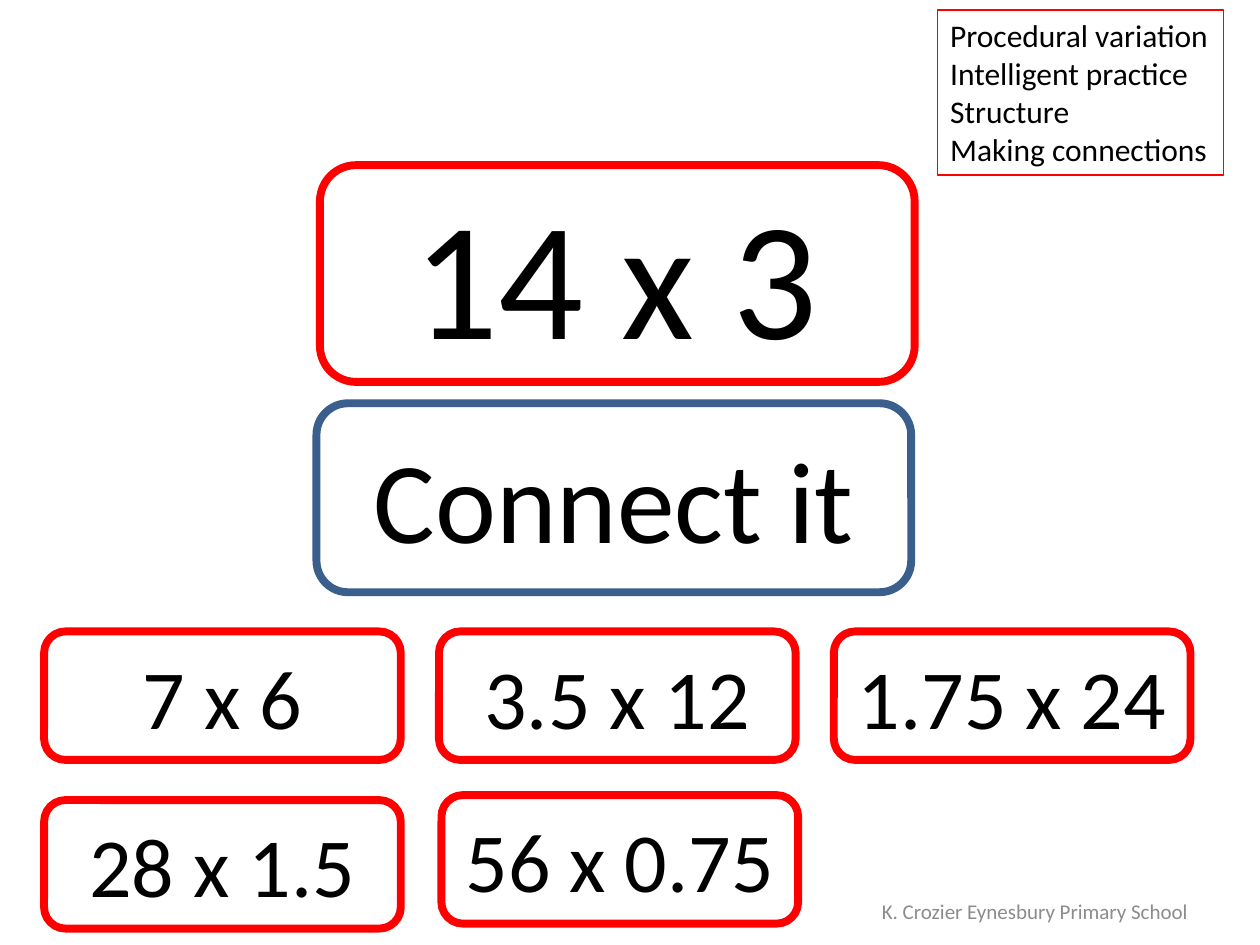
from lxml.etree import SubElement
from pptx import Presentation
from pptx.dml.color import RGBColor
from pptx.enum.shapes import MSO_SHAPE
from pptx.enum.text import MSO_ANCHOR, MSO_AUTO_SIZE, PP_ALIGN
from pptx.oxml.ns import qn
from pptx.util import Cm, Pt

question = "14 x 3"
prompt = "Connect it"
principles = [
    "Procedural variation",
    "Intelligent practice",
    "Structure",
    "Making connections",
]
connections = [
    ("7 x 6", (0, 0)),
    ("3.5 x 12", (0, 0)),
    ("1.75 x 24", (0, 0)),
    ("28 x 1.5", (0, 0)),
    ("56 x 0.75", (0.05, -0.1)),
]
credit = "K. Crozier Eynesbury Primary School"

THEME = {
    "font": "Calibri",
    "text": "000000",
    "muted": "8C8C8C",
    "red": "FF0000",
    "blue": "3A5F8C",
    "sizes": {"question": 96, "prompt": 66, "connection": 48, "principle": 18, "credit": 12},
    "thick": 4.5,
    "thin": 0.75,
}
GRID = {"left": 0.89, "top": 12.73, "across": 7.96, "down": 3.4, "columns": 3}
CARD = (7.19, 2.59)


def place(part, left, top, width, height):
    box = {"left": left, "top": top, "width": width, "height": height}
    for side, length in box.items():
        setattr(part, side, Cm(length))


def write(part, lines, role, color="text", align=PP_ALIGN.CENTER, wrap=True,
          anchor=MSO_ANCHOR.MIDDLE):
    frame = part.text_frame
    frame.text = "\n".join(lines)
    frame_format = {"auto_size": MSO_AUTO_SIZE.NONE, "word_wrap": wrap, "vertical_anchor": anchor}
    for name, value in frame_format.items():
        setattr(frame, name, value)
    font_format = {"name": THEME["font"], "size": Pt(THEME["sizes"][role])}
    for paragraph in frame.paragraphs:
        paragraph.alignment = align
        for run in paragraph.runs:
            for name, value in font_format.items():
                setattr(run.font, name, value)
            run.font.color.rgb = RGBColor.from_string(THEME[color])


def outline(part, color, weight):
    part.line.color.rgb = RGBColor.from_string(THEME[color])
    part.line.width = Pt(THEME[weight])


def add_card(slide, box, color):
    card = slide.shapes.add_shape(MSO_SHAPE.ROUNDED_RECTANGLE, *map(Cm, box))
    card.shadow.inherit = False
    card.fill.background()
    outline(card, color, "thick")
    return card


def main():
    deck = Presentation()
    deck.slide_width, deck.slide_height = Cm(25.4), Cm(19.05)
    slide = deck.slides.add_slide(deck.slide_layouts[1])

    title = slide.shapes.title
    place(title, 8.08, 3.33, 8.74, 4.37)
    write(title, [question], "question", align=PP_ALIGN.LEFT, wrap=False, anchor=MSO_ANCHOR.TOP)

    principle_list = slide.placeholders[1]
    place(principle_list, 18.9, 0.2, 5.77, 3.33)
    write(principle_list, principles, "principle", align=PP_ALIGN.LEFT, wrap=False,
          anchor=MSO_ANCHOR.TOP)
    outline(principle_list, "red", "thin")
    for paragraph in principle_list.text_frame.paragraphs:
        paragraph.space_before = Pt(0)
        properties = paragraph._p.get_or_add_pPr()
        for indent in ("marL", "indent"):
            properties.set(indent, "0")
        SubElement(properties, qn("a:buNone"))

    prompt_card = add_card(slide, (6.38, 8.13, 11.99, 3.81), "blue")
    write(prompt_card, [prompt], "prompt")
    add_card(slide, (6.45, 3.33, 11.99, 4.37), "red")

    for index, (product, (shift_x, shift_y)) in enumerate(connections):
        row, column = divmod(index, GRID["columns"])
        left = GRID["left"] + column * GRID["across"] + shift_x
        top = GRID["top"] + row * GRID["down"] + shift_y
        write(add_card(slide, (left, top, *CARD), "red"), [product], "connection")

    credit_line = slide.shapes.add_textbox(*map(Cm, (16.84, 17.86, 8.05, 1.02)))
    write(credit_line, [credit], "credit", color="muted")

    deck.save("out.pptx")


if __name__ == "__main__":
    main()
